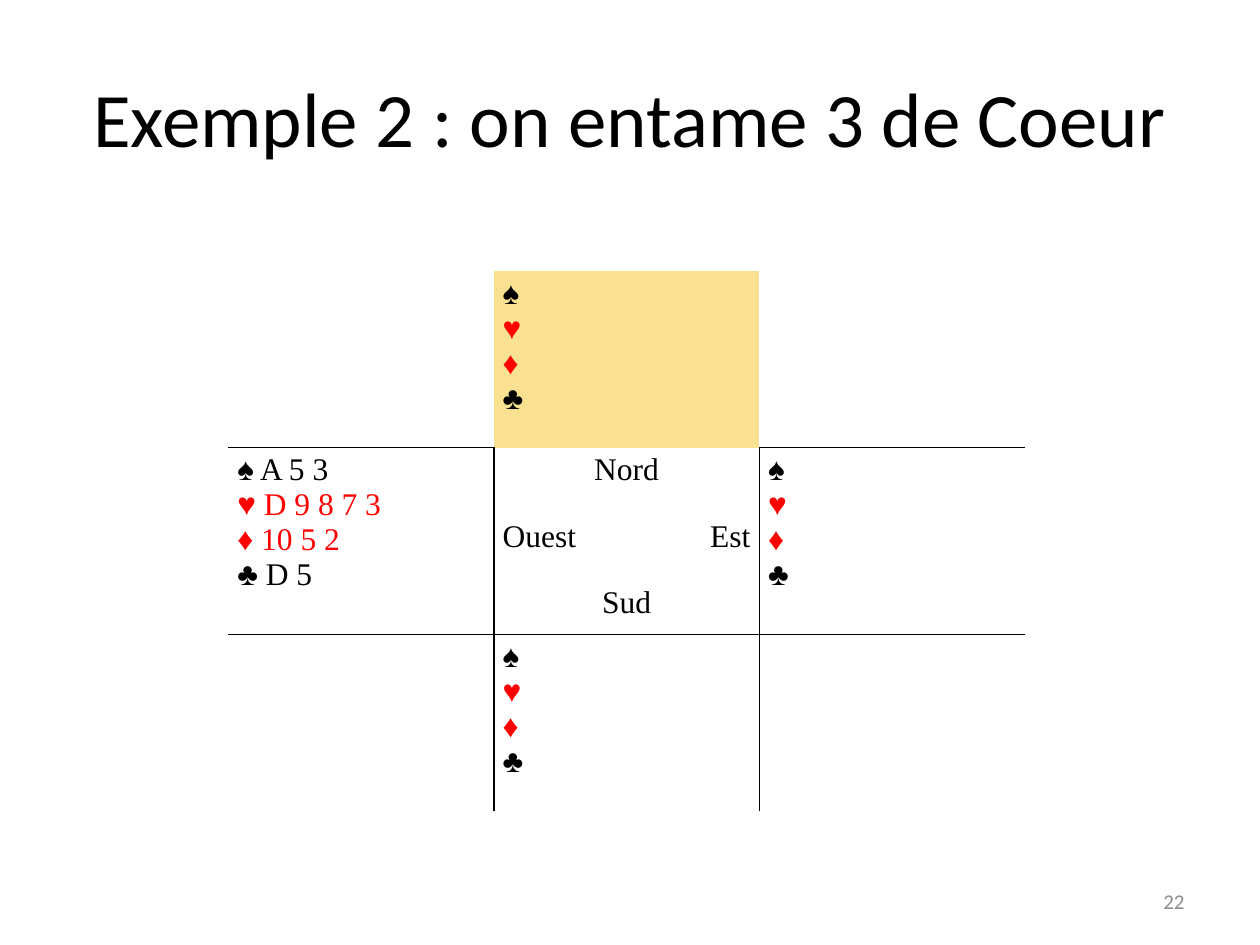
"""Build the bridge slide: a title, the deal table and the page number."""
from dataclasses import dataclass

from lxml import etree
from pptx import Presentation
from pptx import util as u
from pptx.dml.color import RGBColor
from pptx.enum import text
from pptx.oxml import ns

BLACK = RGBColor(0, 0, 0)
RED = RGBColor(0xFF, 0, 0)
GREY = RGBColor(0x8C, 0x8C, 0x8C)
GOLD = RGBColor(0xF9, 0xE1, 0x91)
LEFT, MID, RIGHT = text.PP_ALIGN.LEFT, text.PP_ALIGN.CENTER, text.PP_ALIGN.RIGHT
SUITS = "♠♥♦♣"
COL, ROW = 151.7, 100.8
PAD, GAP = 5.1, 18


@dataclass(frozen=True)
class Label:
    words: str
    left: float
    top: float
    width: float
    height: float
    size: int
    tint: RGBColor
    align: text.PP_ALIGN


@dataclass(frozen=True)
class Hand:
    row: int
    col: int
    cards: tuple[str, ...] = ("", "", "", "")


LABELS = (
    Label("Exemple 2 : on entame 3 de Coeur", 36, 21.6, 648, 90, 44, BLACK, MID),
    Label("22", 516, 500.5, 168, 28.75, 12, GREY, RIGHT),
)
HANDS = (
    Hand(0, 1),
    Hand(1, 0, ("A 5 3", "D 9 8 7 3", "10 5 2", "D 5")),
    Hand(1, 2),
    Hand(2, 1),
)


def style(para, face: str, size: int, tint: RGBColor, align: text.PP_ALIGN) -> None:
    para.alignment = align
    for run in para.runs:
        run.font.name = face
        run.font.size = u.Pt(size)
        run.font.color.rgb = tint


def draw_label(slide, item: Label) -> None:
    box = slide.shapes.add_textbox(
        u.Pt(item.left), u.Pt(item.top), u.Pt(item.width), u.Pt(item.height))
    frame = box.text_frame
    frame.word_wrap = True
    frame.vertical_anchor = text.MSO_ANCHOR.MIDDLE
    frame.text = item.words
    style(frame.paragraphs[0], "Calibri", item.size, item.tint, item.align)


def draw_edge(cell, side: str, shown: bool) -> None:
    props = cell._tc.get_or_add_tcPr()
    line = etree.SubElement(props, ns.qn(f"a:ln{side}"), w=str(u.Pt(1)))
    if shown:
        fill = etree.SubElement(line, ns.qn("a:solidFill"))
        etree.SubElement(fill, ns.qn("a:srgbClr"), val=str(BLACK))
    else:
        etree.SubElement(line, ns.qn("a:noFill"))


def draw_cell(cell, row: int, col: int) -> None:
    north = (row, col) == (0, 1)
    edges = {
        "L": row > 0 and col > 0,
        "R": row > 0 and col < 2,
        "T": row > 0 and (row, col) != (1, 1),
        "B": row < 2 and not north,
    }
    for side, shown in edges.items():
        draw_edge(cell, side, shown)
    if north:
        cell.fill.solid()
        cell.fill.fore_color.rgb = GOLD
    else:
        cell.fill.background()
    cell.margin_left = cell.margin_right = u.Pt(PAD)
    cell.margin_top = cell.margin_bottom = u.Pt(3)


def draw_hand(grid, hand: Hand) -> None:
    frame = grid.cell(hand.row, hand.col).text_frame
    frame.text = "\n".join(
        f"{suit} {cards}".strip() for suit, cards in zip(SUITS, hand.cards))
    for suit, para in zip(SUITS, frame.paragraphs):
        style(para, "Times New Roman", 18, RED if suit in "♥♦" else BLACK, LEFT)


def draw_seats(cell) -> None:
    frame = cell.text_frame
    frame.text = "Nord\nOuest\tEst\nSud"
    for para, align in zip(frame.paragraphs, (MID, LEFT, MID)):
        style(para, "Times New Roman", 18, BLACK, align)
    sides = frame.paragraphs[1]
    sides.space_before = sides.space_after = u.Pt(GAP)
    tabs = etree.SubElement(sides._p.get_or_add_pPr(), ns.qn("a:tabLst"))
    etree.SubElement(
        tabs, ns.qn("a:tab"), pos=str(u.Pt(COL - 2 * PAD)), algn="r")


def draw_deal(slide) -> None:
    grid = slide.shapes.add_table(
        3, 3, u.Pt(130.5), u.Pt(155), u.Pt(3 * COL), u.Pt(3 * ROW)).table
    grid.first_row = grid.horz_banding = False
    for col in grid.columns:
        col.width = u.Pt(COL)
    for row in grid.rows:
        row.height = u.Pt(ROW)
    for row in range(3):
        for col in range(3):
            draw_cell(grid.cell(row, col), row, col)
    for hand in HANDS:
        draw_hand(grid, hand)
    draw_seats(grid.cell(1, 1))


def main() -> None:
    deck = Presentation()
    deck.slide_width, deck.slide_height = u.Pt(720), u.Pt(540)
    slide = deck.slides.add_slide(deck.slide_layouts[6])
    for item in LABELS:
        draw_label(slide, item)
    draw_deal(slide)
    deck.save("out.pptx")


if __name__ == "__main__":
    main()
